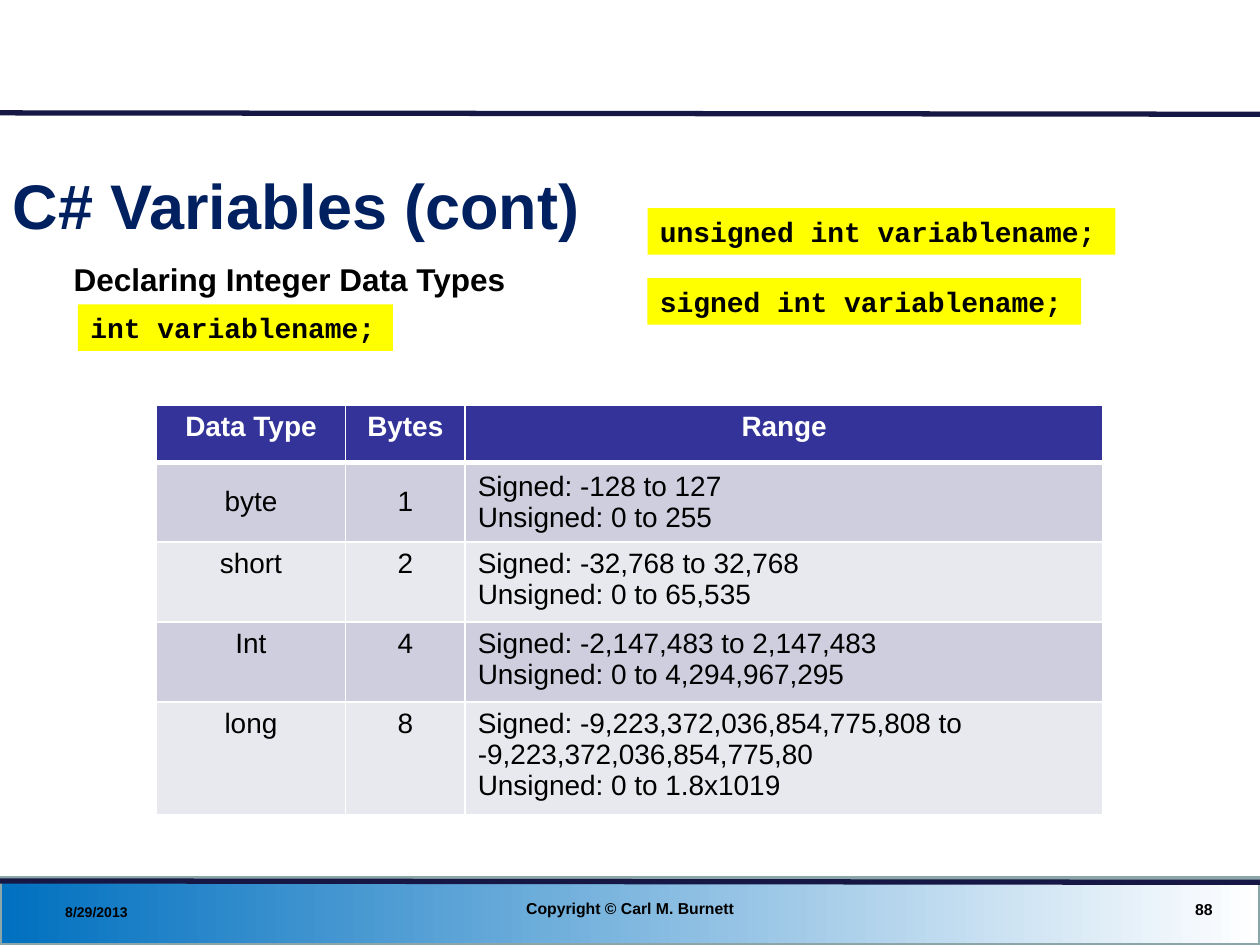
import pptx
import pptx.util
import pptx.dml.color
import pptx.enum.shapes
import pptx.enum.text
import pptx.oxml
import pptx.oxml.ns
from dataclasses import dataclass

Pt = pptx.util.Pt
RGB = pptx.dml.color.RGBColor.from_string
Align = pptx.enum.text.PP_ALIGN
Anchor = pptx.enum.text.MSO_ANCHOR
AutoSize = pptx.enum.text.MSO_AUTO_SIZE


@dataclass(frozen=True)
class Theme:
    sans: str = "Arial"
    mono: str = "Courier New"
    black: str = "000000"
    white: str = "FFFFFF"
    title: str = "002060"
    rule: str = "171745"
    band_start: str = "0070C0"
    band_edge: str = "8AA6A8"
    code_fill: str = "FFFF00"
    header_fill: str = "333399"
    row_fills: tuple = ("CECEDE", "E8E8EF")
    title_size: int = 36
    subtitle_size: int = 18
    body_size: int = 16
    footer_size: int = 9
    date_size: int = 8


theme = Theme()


def style_text(frame, text, size, color=theme.black, bold=True, font=theme.sans,
               align=Align.LEFT):
    frame.text = text
    for paragraph in frame.paragraphs:
        paragraph.alignment = align
        paragraph.font.name = font
        paragraph.font.size = Pt(size)
        paragraph.font.bold = bold
        paragraph.font.color.rgb = RGB(color)


def set_border(cell, side, width):
    border = pptx.oxml.parse_xml(
        f'<a:{side} {pptx.oxml.ns.nsdecls("a")} w="{Pt(width)}"><a:solidFill>'
        f'<a:srgbClr val="{theme.white}"/></a:solidFill></a:{side}>')
    cell._tc.get_or_add_tcPr().append(border)


presentation = pptx.Presentation()
presentation.slide_width = Pt(720)
presentation.slide_height = Pt(540)
slide = presentation.slides.add_slide(presentation.slide_layouts[5])
shapes = slide.shapes

footer_band = shapes.add_shape(pptx.enum.shapes.MSO_SHAPE.RECTANGLE,
                               Pt(0), Pt(501.84), Pt(720), Pt(38.16))
footer_band.shadow.inherit = False
footer_band.fill.gradient()
footer_band.fill.gradient_angle = 0
for stop, color in zip(footer_band.fill.gradient_stops, (theme.band_start, theme.white)):
    stop.color.rgb = RGB(color)
footer_band.line.color.rgb = RGB(theme.band_edge)
footer_band.line.width = Pt(2)

for start_y, end_y in ((503.4, 504.2), (64.5, 65.3)):
    rule = shapes.add_connector(pptx.enum.shapes.MSO_CONNECTOR.STRAIGHT,
                                Pt(0), Pt(start_y), Pt(720), Pt(end_y))
    rule.line.color.rgb = RGB(theme.rule)
    rule.line.width = Pt(3)
    rule._element.spPr.append(
        pptx.oxml.parse_xml(f'<a:effectLst {pptx.oxml.ns.nsdecls("a")}/>'))

title = shapes.title
title.left, title.top, title.width, title.height = Pt(0), Pt(82), Pt(690), Pt(70)
title.text_frame.auto_size = AutoSize.NONE
title.text_frame.vertical_anchor = Anchor.MIDDLE
style_text(title.text_frame, "C# Variables (cont)", theme.title_size, theme.title)

footer_items = (
    ("8/29/2013", 30.2, 511.2, 168, 19.4, theme.date_size, Align.LEFT),
    ("88", 532, 509, 168, 21, theme.footer_size, Align.RIGHT),
    ("Copyright © Carl M. Burnett", 246, 508.5, 228, 21, theme.footer_size, Align.CENTER),
)
for text, left, top, width, height, size, align in footer_items:
    footer = shapes.add_textbox(Pt(left), Pt(top), Pt(width), Pt(height)).text_frame
    footer.word_wrap = True
    footer.vertical_anchor = Anchor.MIDDLE
    style_text(footer, text, size, align=align)

declarations = (
    ("Declaring Integer Data Types", 35, 145, 263.5, 29, theme.sans, theme.subtitle_size, None),
    ("int variablename;", 44.6, 174, 180, 26.6, theme.mono, theme.body_size, theme.code_fill),
    ("unsigned int variablename;", 370, 119, 267.4, 26.6, theme.mono, theme.body_size,
     theme.code_fill),
    ("signed int variablename;", 370, 159, 247.8, 26.6, theme.mono, theme.body_size,
     theme.code_fill),
)
for text, left, top, width, height, font, size, fill in declarations:
    declaration = shapes.add_textbox(Pt(left), Pt(top), Pt(width), Pt(height))
    declaration.text_frame.word_wrap = False
    declaration.text_frame.auto_size = AutoSize.SHAPE_TO_FIT_TEXT
    if fill:
        declaration.fill.solid()
        declaration.fill.fore_color.rgb = RGB(fill)
    style_text(declaration.text_frame, text, size, font=font)

type_rows = (
    ("Data Type", "Bytes", "Range"),
    ("byte", "1", "Signed: -128 to 127\vUnsigned: 0 to 255"),
    ("short", "2", "Signed: -32,768 to 32,768\nUnsigned: 0 to 65,535"),
    ("Int", "4", "Signed: -2,147,483 to 2,147,483\nUnsigned: 0 to 4,294,967,295"),
    ("long", "8", "Signed: -9,223,372,036,854,775,808 to -9,223,372,036,854,775,80\n"
                  "Unsigned: 0 to 1.8x1019"),
)
column_widths = (108, 68.4, 364.6)
row_heights = (32.8, 45.6, 45.6, 45.6, 64.4)
type_table = shapes.add_table(len(type_rows), len(column_widths), Pt(89.4), Pt(231.4),
                              Pt(sum(column_widths)), Pt(sum(row_heights))).table
for column, width in zip(type_table.columns, column_widths):
    column.width = Pt(width)
for row, height in zip(type_table.rows, row_heights):
    row.height = Pt(height)

for row_index, row in enumerate(type_rows):
    is_header = row_index == 0
    fill = theme.header_fill if is_header else theme.row_fills[(row_index - 1) % 2]
    for column_index, text in enumerate(row):
        cell = type_table.cell(row_index, column_index)
        centred = is_header or column_index < 2
        style_text(cell.text_frame, text, theme.body_size,
                   theme.white if is_header else theme.black, is_header,
                   align=Align.CENTER if centred else Align.LEFT)
        cell.vertical_anchor = Anchor.MIDDLE if row[0] == "byte" else Anchor.TOP
        for side in ("lnL", "lnR", "lnT", "lnB"):
            thick = (is_header and side == "lnB") or (row_index == 1 and side == "lnT")
            set_border(cell, side, 3 if thick else 1)
        cell.fill.solid()
        cell.fill.fore_color.rgb = RGB(fill)

presentation.save("out.pptx")
